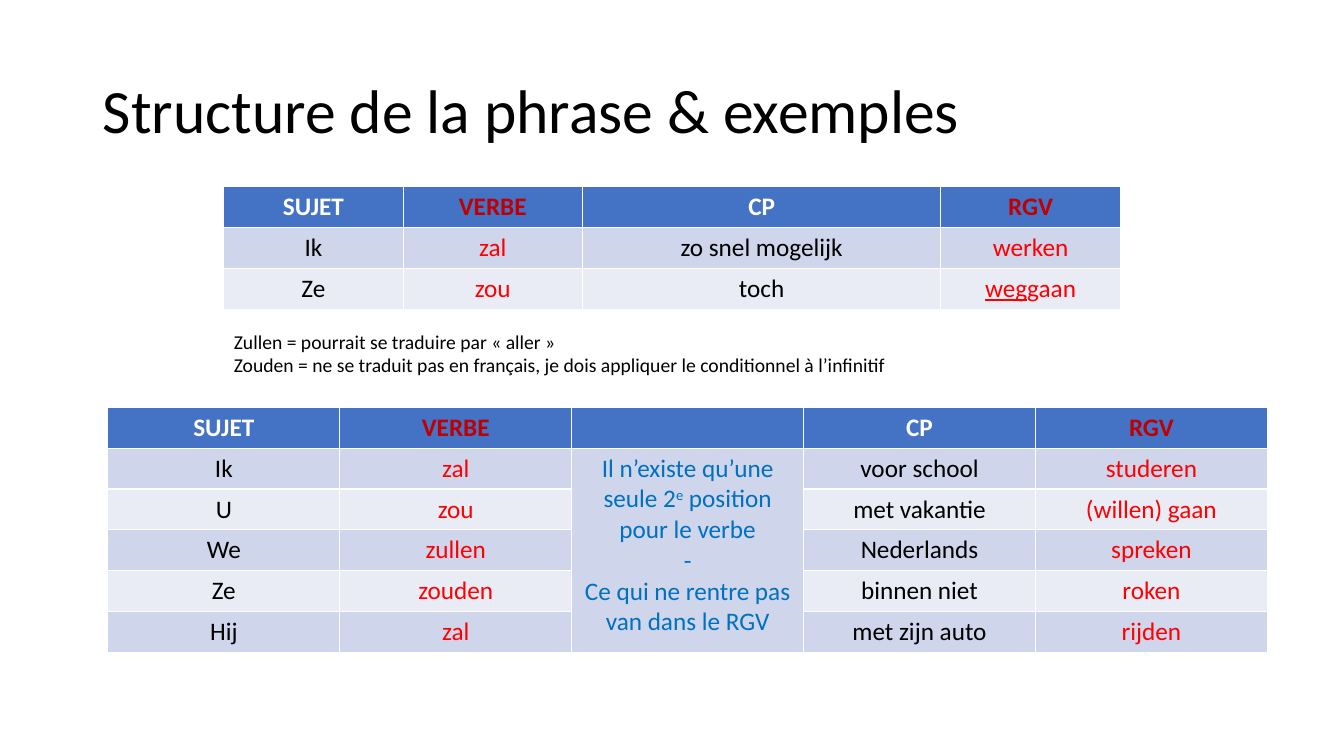
from dataclasses import dataclass

from pptx import Presentation
from pptx.dml.color import RGBColor
from pptx.enum.text import MSO_ANCHOR, MSO_AUTO_SIZE, PP_ALIGN
from pptx.util import Inches, Pt


@dataclass(frozen=True)
class Theme:
    font: str = "Calibri"
    title: int = 44
    table: int = 18
    note: int = 14
    black: str = "000000"
    white: str = "FFFFFF"
    header: str = "4472C4"
    bands: tuple = ("CFD5EA", "E9EBF5")
    header_verb: str = "C00000"
    verb: str = "FF0000"
    rule: str = "0070C0"


theme = Theme()


def write(tf, paragraphs, size, color=theme.black, bold=False,
          align=PP_ALIGN.LEFT, spacing=None):
    """Each paragraph is a string or a list of (text, style) runs."""
    for i, runs in enumerate(paragraphs):
        p = tf.paragraphs[0] if i == 0 else tf.add_paragraph()
        p.alignment = align
        p.line_spacing = spacing
        for text, style in [(runs, "")] if isinstance(runs, str) else runs:
            r = p.add_run()
            r.text = text
            r.font.name = theme.font
            r.font.size = Pt(size)
            r.font.bold = bold
            r.font.color.rgb = RGBColor.from_string(color)
            if style == "underline":
                r.font.underline = True
            elif style == "superscript":
                r._r.get_or_add_rPr().set("baseline", "30000")


def add_sentence_table(left, top, width, height, ratios, rows, merged=None):
    """Fill a banded table; the column numbered merged is one cell below its header."""
    table = slide.shapes.add_table(
        len(rows), len(ratios), Inches(left), Inches(top), Inches(width), Inches(height)).table
    for column, ratio in zip(table.columns, ratios):
        column.width = Inches(width * ratio / sum(ratios))
    if merged is not None:
        table.cell(1, merged).merge(table.cell(len(rows) - 1, merged))
    for i, row in enumerate(rows):
        for j, content in enumerate(row):
            cell = table.cell(i, j)
            cell.fill.solid()
            fill = theme.bands[(i - 1) % 2] if i else theme.header
            cell.fill.fore_color.rgb = RGBColor.from_string(fill)
            if not content:
                continue
            is_verb = rows[0][j] in ("VERBE", "RGV")
            if i == 0:
                color = theme.header_verb if is_verb else theme.white
            elif j == merged:
                color = theme.rule
            else:
                color = theme.verb if is_verb else theme.black
            paragraphs = [content] if isinstance(content, str) else content
            write(cell.text_frame, paragraphs, theme.table, color,
                  bold=i == 0, align=PP_ALIGN.CENTER)


prs = Presentation()
prs.slide_width = Inches(13.33)
prs.slide_height = Inches(7.5)
slide = prs.slides.add_slide(prs.slide_layouts[5])

title = slide.shapes.title
title.left, title.top = Inches(0.92), Inches(0.4)
title.width, title.height = Inches(11.5), Inches(1.45)
title.text_frame.vertical_anchor = MSO_ANCHOR.MIDDLE
write(title.text_frame, ["Structure de la phrase & exemples"], theme.title, spacing=0.9)

verb_position_rule = [
    [("Il n’existe qu’une seule 2", ""), ("e", "superscript"), (" position pour le verbe", "")],
    "-",
    "Ce qui ne rentre pas van dans le RGV",
]
add_sentence_table(1.07, 4.04, 11.5, 2.43, [1, 1, 1, 1, 1], [
    ["SUJET", "VERBE", "", "CP", "RGV"],
    ["Ik", "zal", verb_position_rule, "voor school", "studeren"],
    ["U", "zou", "", "met vakantie", "(willen) gaan"],
    ["We", "zullen", "", "Nederlands", "spreken"],
    ["Ze", "zouden", "", "binnen niet", "roken"],
    ["Hij", "zal", "", "met zijn auto", "rijden"],
], merged=2)

add_sentence_table(2.22, 1.85, 8.89, 1.22, [1, 1, 2, 1], [
    ["SUJET", "VERBE", "CP", "RGV"],
    ["Ik", "zal", "zo snel mogelijk", "werken"],
    ["Ze", "zou", "toch", [[("weg", "underline"), ("gaan", "")]]],
])

note = slide.shapes.add_textbox(Inches(2.22), Inches(3.22), Inches(8.89), Inches(0.57))
tf = note.text_frame
tf.word_wrap = True
tf.auto_size = MSO_AUTO_SIZE.SHAPE_TO_FIT_TEXT
write(tf, [
    "Zullen = pourrait se traduire par « aller »",
    "Zouden = ne se traduit pas en français, je dois appliquer le conditionnel à l’infinitif",
], theme.note)

prs.save("out.pptx")
